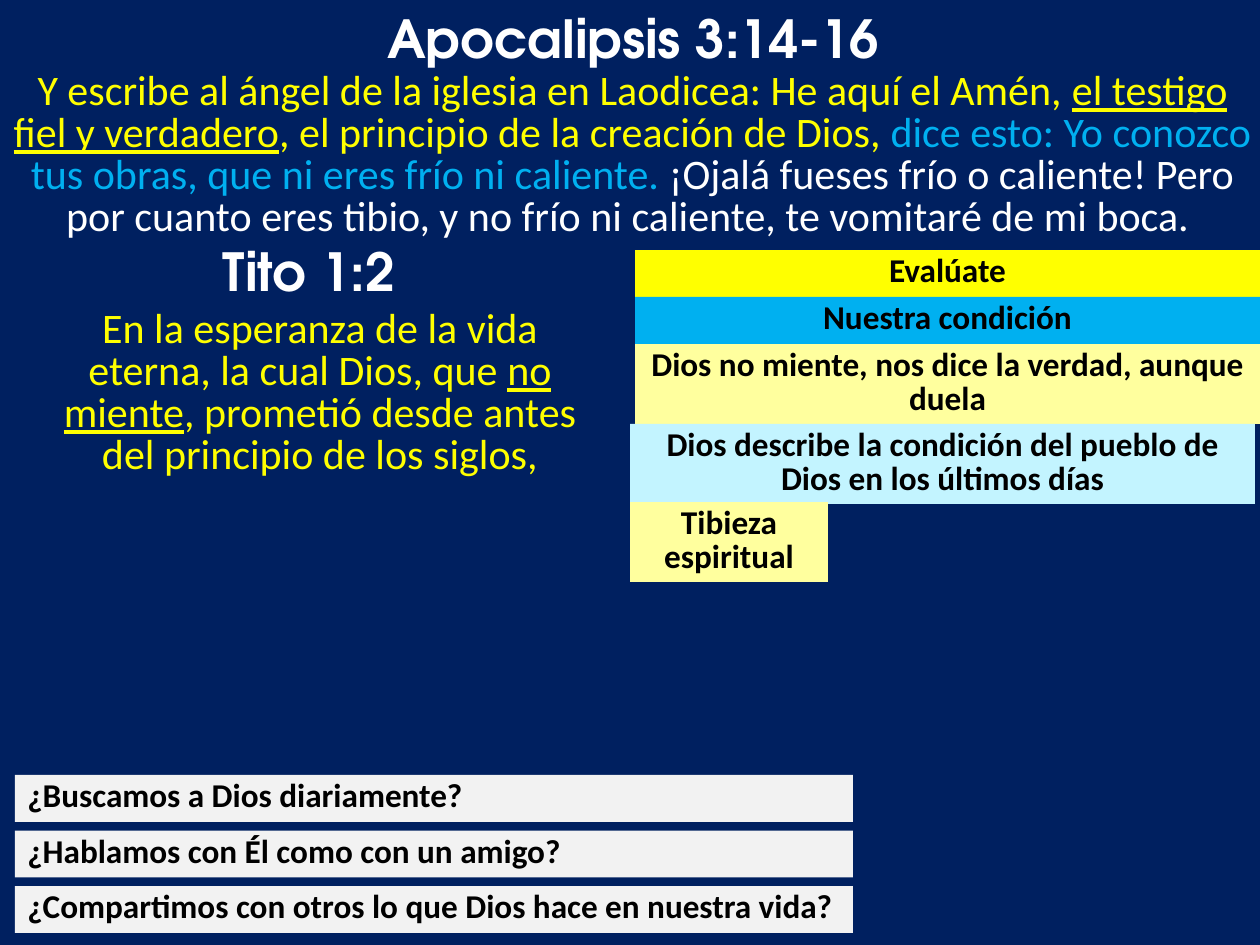
import pptx
import pptx.util
import pptx.dml.color
import pptx.enum.shapes
import pptx.enum.text

SCALE = 914400 / 126
NAVY, WHITE, BLACK = "002060", "FFFFFF", "000000"
YELLOW, BLUE, CREAM, ICE, GRAY = "FFFF00", "00B0F0", "FFFF9E", "C3F4FF", "F2F2F2"
ALIGN = pptx.enum.text.PP_ALIGN


def px(num):
    """Turn pixels into EMU."""
    return pptx.util.Emu(round(num * SCALE))


def paint(fill, tint):
    """Give a fill one solid colour."""
    fill.solid()
    fill.fore_color.rgb = pptx.dml.color.RGBColor.from_string(tint)


def style(run, size, tint, face="Calibri", bold=False, under=False):
    """Set the font of a run."""
    font = run.font
    font.name, font.size = face, pptx.util.Pt(size)
    font.bold, font.underline = bold, under
    paint(font.fill, tint)


def add_text(slide, box):
    """Add a wrapping text box and return its first paragraph."""
    frame = slide.shapes.add_textbox(*map(px, box)).text_frame
    frame.word_wrap = True
    para = frame.paragraphs[0]
    para.alignment = ALIGN.CENTER
    return para


def add_title(slide, box, text):
    """Add the heading of a Bible passage."""
    para = add_text(slide, box)
    para.text = text
    style(para.runs[0], 30, WHITE, "TeX Gyre Adventor", True)


def add_verse(slide, box, parts):
    """Add a passage made of (text, colour, underline) parts."""
    para = add_text(slide, box)
    para.line_spacing = pptx.util.Pt(24)
    for text, tint, under in parts:
        run = para.add_run()
        run.text = text
        style(run, 24, tint, under=under)


def add_bar(slide, box, text, tint, align=ALIGN.CENTER):
    """Add a filled bar with bold black text."""
    kind = pptx.enum.shapes.MSO_SHAPE.RECTANGLE
    bar = slide.shapes.add_shape(kind, *map(px, box))
    bar.shadow.inherit = False
    paint(bar.fill, tint)
    bar.line.fill.background()
    frame = bar.text_frame
    frame.word_wrap = True
    frame.vertical_anchor = pptx.enum.text.MSO_ANCHOR.TOP
    para = frame.paragraphs[0]
    para.text = text
    para.alignment = align
    para.line_spacing = pptx.util.Pt(19)
    style(para.runs[0], 19, BLACK, bold=True)


def main():
    """Build and save the slide."""
    deck = pptx.Presentation()
    deck.slide_width, deck.slide_height = px(1260), px(945)
    slide = deck.slides.add_slide(deck.slide_layouts[6])
    paint(slide.background.fill, NAVY)

    add_title(slide, (333, 0, 586, 140), " Apocalipsis 3:14-16")
    add_verse(slide, (-5, 66, 1275, 183), [
        ("Y escribe al ángel de la iglesia en Laodicea: He aquí el Amén, ", YELLOW, False),
        ("el testigo fiel y verdadero", YELLOW, True),
        (", el principio de la creación de Dios, ", YELLOW, False),
        ("dice esto: Yo conozco tus obras, que ni eres frío ni caliente.", BLUE, False),
        (" ¡Ojalá fueses frío o caliente! Pero por cuanto eres tibio, "
         "y no frío ni caliente, te vomitaré de mi boca. ", WHITE, False),
    ])
    add_title(slide, (44, 233, 515, 77), " Tito 1:2")
    add_verse(slide, (35, 304, 570, 183), [
        ("En la esperanza de la vida eterna, la cual Dios, que ", YELLOW, False),
        ("no miente", YELLOW, True),
        (", prometió desde antes del principio de los siglos,", YELLOW, False),
    ])

    points = [
        ((635, 250, 625, 47), "Evalúate", YELLOW),
        ((635, 297, 625, 47), "Nuestra condición", BLUE),
        ((635, 344, 625, 80), "Dios no miente, nos dice la verdad, aunque duela", CREAM),
        ((630, 424, 625, 80),
         "Dios describe la condición del pueblo de Dios en los últimos días", ICE),
        ((630, 502, 198, 80), "Tibieza espiritual", CREAM),
    ]
    for box, text, tint in points:
        add_bar(slide, box, text, tint)

    asks = [
        "¿Buscamos a Dios diariamente?",
        "¿Hablamos con Él como con un amigo?",
        "¿Compartimos con otros lo que Dios hace en nuestra vida?",
    ]
    for row, text in enumerate(asks):
        add_bar(slide, (15, 775 + 55.5 * row, 838, 47), text, GRAY, ALIGN.LEFT)

    deck.save("out.pptx")


if __name__ == "__main__":
    main()
